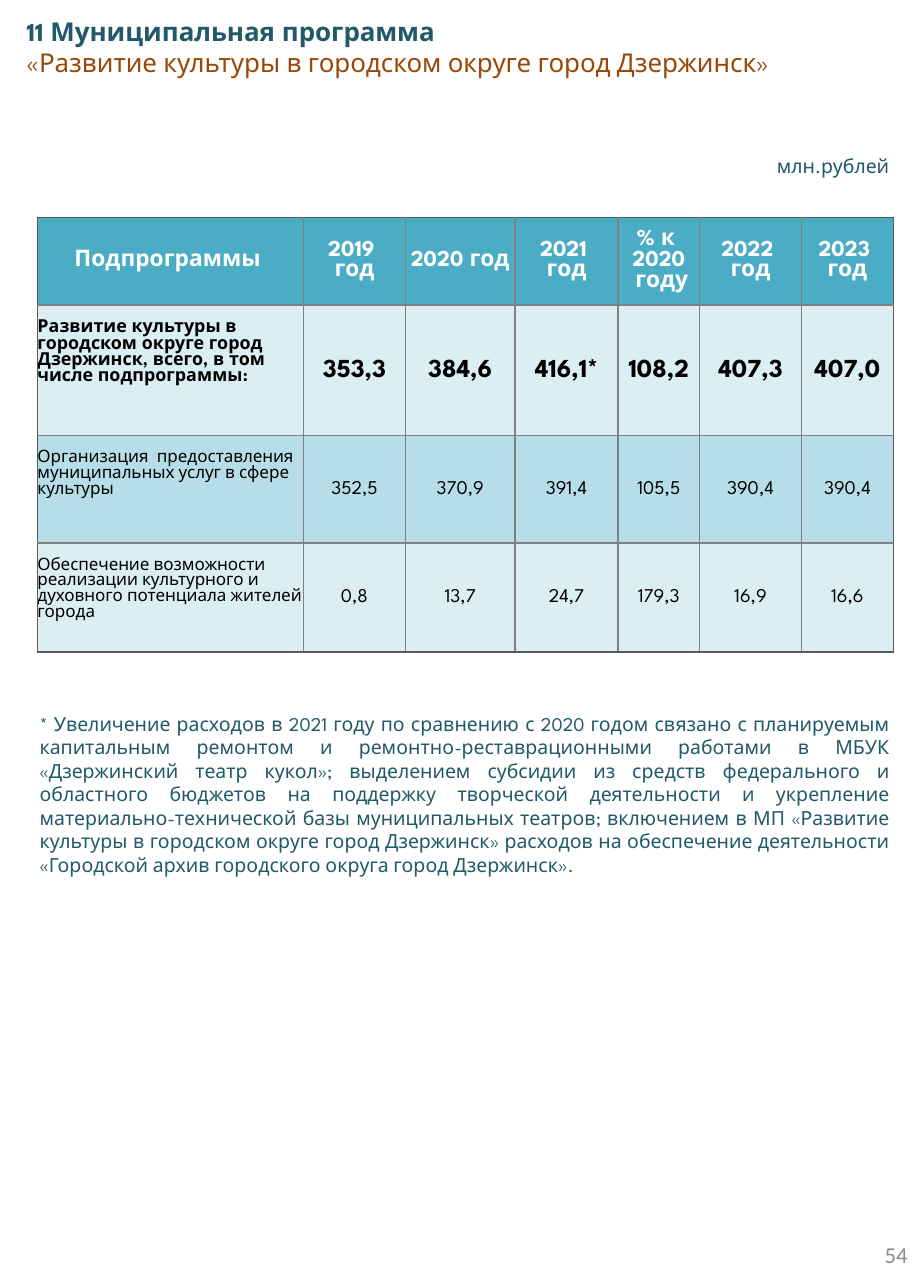
import pptx
import pptx.util
import pptx.dml.color
import pptx.enum.text
import pptx.oxml.ns
import lxml.etree

Inches, Pt = pptx.util.Inches, pptx.util.Pt
Align, Anchor = pptx.enum.text.PP_ALIGN, pptx.enum.text.MSO_ANCHOR

PAGE_SIZE = {"slide_width": Pt(567), "slide_height": Pt(793.75)}
BRAND_FONT = "League Spartan"
TEAL, BROWN, GRAY, WHITE, BLACK = "215968", "984807", "8C8C8C", "FFFFFF", "000000"
OUTER_LINE, INNER_LINE = "595959", "808080"
BOX_LEADING, TABLE_LEADING = 1.21, 0.92

HEADER = ["Подпрограммы ", "2019 \nгод", "2020 год", "2021 \nгод", "% к \n2020\n году", "2022 \nгод", "2023 \nгод"]
PROGRAMS = [
    ["Развитие культуры в городском округе город Дзержинск, всего, в том числе подпрограммы:",
     "353,3", "384,6", "416,1*", "108,2", "407,3", "407,0"],
    ["Организация  предоставления муниципальных услуг в сфере культуры",
     "352,5", "370,9", "391,4", "105,5", "390,4", "390,4"],
    ["Обеспечение возможности реализации культурного и духовного потенциала жителей города",
     "0,8", "13,7", "24,7", "179,3", "16,9", "16,6"],
]
TABLE_PLACE = (0.32, 1.86, 7.34, 3.73)
COLUMN_WIDTHS = [2.28, 0.87, 0.94, 0.88, 0.7, 0.87, 0.79]
ROW_HEIGHTS = [0.75, 1.12, 0.92, 0.93]
ROW_STYLES = [
    {"fill": "4BACC6", "label": 14, "value": 14, "bold": True, "color": WHITE},
    {"fill": "DBEEF4", "label": 11, "value": 16, "bold": True, "color": BLACK},
    {"fill": "B7DEE8", "label": 10.5, "value": 12, "bold": False, "color": BLACK},
    {"fill": "DBEEF4", "label": 10.5, "value": 12, "bold": False, "color": BLACK},
]

FOOTNOTE = (
    "* Увеличение расходов в 2021 году по сравнению с 2020 годом связано с планируемым капитальным "
    "ремонтом и ремонтно-реставрационными работами в МБУК «Дзержинский театр кукол»; выделением субсидии "
    "из средств федерального и областного бюджетов на поддержку творческой деятельности и укрепление "
    "материально-технической базы муниципальных театров; включением в МП «Развитие культуры в городском "
    "округе город Дзержинск» расходов на обеспечение деятельности «Городской архив городского округа "
    "город Дзержинск»."
)
NARROW, WIDE = (0.1, 0.05), (0.11, 0.06)
TEXT_BOXES = [
    {"place": (6.54, 1.26, 1.26, 0.31), "inset": WIDE,
     "lines": [("млн.рублей", {"size": 12, "color": TEAL})]},
    {"place": (0.13, 0.08, 7.58, 0.64), "inset": NARROW,
     "lines": [("11 Муниципальная программа", {"size": 16, "color": TEAL, "bold": True}),
               ("«Развитие культуры в городском округе город Дзержинск»", {"size": 16, "color": BROWN})]},
    {"place": (6.04, 10.44, 1.84, 0.59), "inset": WIDE, "anchor": Anchor.MIDDLE,
     "lines": [("54", {"size": 14, "color": GRAY, "font": "Calibri", "align": Align.RIGHT})]},
    {"place": (0.24, 6.04, 7.48, 1.51), "inset": NARROW,
     "lines": [(FOOTNOTE, {"size": 12, "color": TEAL, "align": Align.JUSTIFY})]},
]


def rgb(value):
    return pptx.dml.color.RGBColor.from_string(value)


def set_all(target, values):
    for name, value in values.items():
        setattr(target, name, value)


def write_lines(frame, lines, leading):
    for index, (text, style) in enumerate(lines):
        para = frame.paragraphs[0] if index == 0 else frame.add_paragraph()
        set_all(para, {"alignment": style.get("align", Align.LEFT),
                       "line_spacing": Pt(style["size"] * leading)})
        span = para.add_run()
        span.text = text
        set_all(span.font, {"name": style.get("font", BRAND_FONT), "size": Pt(style["size"]),
                            "bold": style.get("bold", False)})
        span.font.color.rgb = rgb(style["color"])


def add_text_box(page, content):
    frame = page.shapes.add_textbox(*map(Inches, content["place"])).text_frame
    side, edge = map(Inches, content["inset"])
    set_all(frame, {"word_wrap": True, "vertical_anchor": content.get("anchor", Anchor.TOP),
                    "margin_left": side, "margin_right": side, "margin_top": edge, "margin_bottom": edge})
    write_lines(frame, content["lines"], BOX_LEADING)


def set_borders(cell, outer_sides):
    properties = cell._tc.get_or_add_tcPr()
    for side, is_outer in outer_sides.items():
        line = lxml.etree.SubElement(properties, pptx.oxml.ns.qn("a:ln" + side), w=str(Pt(1)))
        fill = lxml.etree.SubElement(line, pptx.oxml.ns.qn("a:solidFill"))
        lxml.etree.SubElement(fill, pptx.oxml.ns.qn("a:srgbClr"), val=OUTER_LINE if is_outer else INNER_LINE)


def add_program_table(page):
    rows = [HEADER] + PROGRAMS
    last_row, last_column = len(rows) - 1, len(HEADER) - 1
    table = page.shapes.add_table(len(rows), len(HEADER), *map(Inches, TABLE_PLACE)).table
    for column, width in zip(table.columns, COLUMN_WIDTHS):
        column.width = Inches(width)
    for row, height in zip(table.rows, ROW_HEIGHTS):
        row.height = Inches(height)
    for row, (texts, style) in enumerate(zip(rows, ROW_STYLES)):
        for column, text in enumerate(texts):
            cell = table.cell(row, column)
            is_label = row > 0 and column == 0
            margin = Inches(0.01 if row > 0 and column > 0 else 0)
            set_all(cell, {"margin_left": margin, "margin_right": margin, "margin_bottom": 0,
                           "margin_top": Inches(0.13) if is_label else margin,
                           "vertical_anchor": Anchor.TOP if is_label else Anchor.MIDDLE})
            set_borders(cell, {"L": column == 0, "R": column == last_column,
                               "T": row == 0, "B": row == last_row})
            cell.fill.solid()
            cell.fill.fore_color.rgb = rgb(style["fill"])
            format_values = {"size": style["label" if column == 0 else "value"], "bold": style["bold"],
                             "color": style["color"], "align": Align.LEFT if is_label else Align.CENTER}
            write_lines(cell.text_frame, [(line, format_values) for line in text.split("\n")], TABLE_LEADING)


def main():
    deck = pptx.Presentation()
    set_all(deck, PAGE_SIZE)
    page = deck.slides.add_slide(deck.slide_layouts[6])
    add_program_table(page)
    for content in TEXT_BOXES:
        add_text_box(page, content)
    deck.save("out.pptx")


if __name__ == "__main__":
    main()
